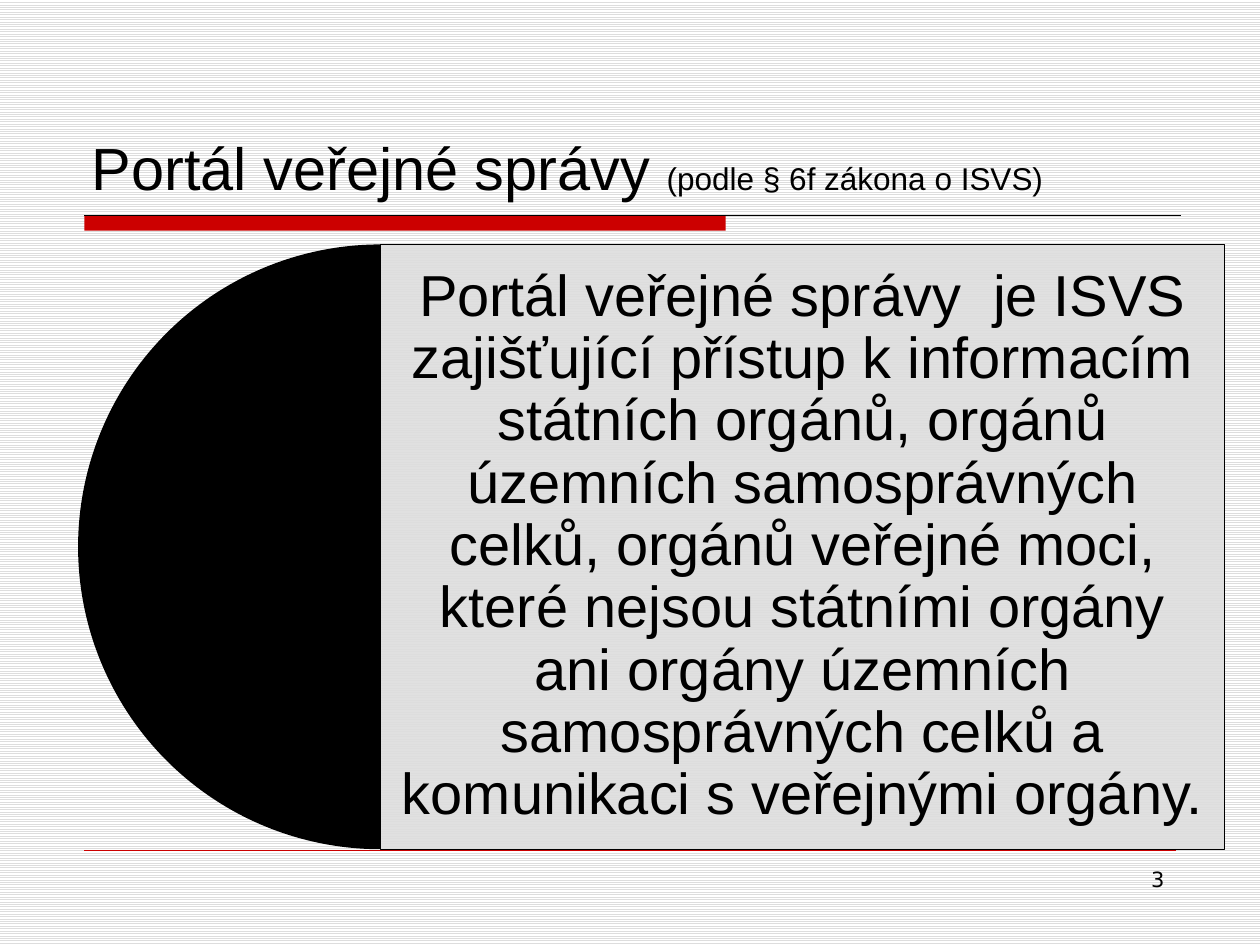
from lxml import etree
from pptx import Presentation
from pptx.dml.color import RGBColor as RGB
from pptx.enum.dml import MSO_PATTERN as PAT
from pptx.enum.shapes import MSO_CONNECTOR as CON, MSO_SHAPE as SHP
from pptx.enum.text import MSO_ANCHOR as ANC, MSO_AUTO_SIZE as AUTO, PP_ALIGN as AL
from pptx.oxml.ns import qn
from pptx.util import Inches, Pt

# Content
TITLE = [("Portál veřejné správy ", 34), ("(podle § 6f zákona o ISVS)", 18)]
BODY = [(
    "Portál veřejné správy  je ISVS zajišťující přístup k informacím "
    "státních orgánů, orgánů územních samosprávných celků, orgánů veřejné "
    "moci, které nejsou státními orgány ani orgány územních samosprávných "
    "celků a komunikaci s veřejnými orgány.", 33)]
PAGE = [("3", 12)]
HEX = {"red": "CC0000", "black": "000000", "grey": "DDDDDD", "white": "FFFFFF"}

# Layout: the panel starts at the middle of the disc
LEFT, TOP, SIZE = 0.62, 1.94, 4.8
MID = LEFT + SIZE / 2
RULE = 1.71


def color(name):
    return RGB.from_string(HEX[name])


def write(shape, runs, font="Arial", align=AL.LEFT, anchor=ANC.TOP,
          inset=None, spacing=None):
    frame = shape.text_frame
    frame.word_wrap = True
    frame.auto_size = AUTO.NONE
    frame.vertical_anchor = anchor
    if inset is not None:
        frame.margin_left = frame.margin_right = Inches(inset)
        frame.margin_top = frame.margin_bottom = Inches(inset)
    para = frame.paragraphs[0]
    para.alignment = align
    if spacing:
        para.line_spacing = spacing
    for text, size in runs:
        run = para.add_run()
        run.text = text
        run.font.name = font
        run.font.size = Pt(size)
        run.font.color.rgb = color("black")


def block(kind, x, y, w, h, fill, line=None):
    shape = slide.shapes.add_shape(kind, *map(Inches, (x, y, w, h)))
    shape.shadow.inherit = False
    shape.fill.solid()
    shape.fill.fore_color.rgb = color(fill)
    if line:
        shape.line.color.rgb = color(line)
        shape.line.width = Pt(0.75)
    else:
        shape.line.fill.background()
    return shape


def rule(x, y, end, name, width):
    line = slide.shapes.add_connector(
        CON.STRAIGHT, *map(Inches, (x, y, end, y)))
    line.line.color.rgb = color(name)
    line.line.width = Pt(width)
    etree.SubElement(line._element.spPr, qn("a:effectLst"))


deck = Presentation()
deck.slide_width, deck.slide_height = Inches(10), Inches(7.5)
slide = deck.slides.add_slide(deck.slide_layouts[5])

# Striped background
back = slide.background.fill
back.patterned()
back.pattern = PAT.LIGHT_HORIZONTAL
back.fore_color.rgb = color("grey")
back.back_color.rgb = color("white")

# Title
title = slide.shapes.title
title.left, title.top = Inches(0.63), Inches(0.33)
title.width, title.height = Inches(8.75), Inches(1.33)
write(title, TITLE, anchor=ANC.BOTTOM)

# Title bar and rules
block(SHP.RECTANGLE, 0.67, RULE, 5.09, 0.12, "red")
rule(0.67, RULE, 9.37, "black", 0.75)
rule(0.67, 6.75, 9.33, "red", 0.25)

# Page number
page = slide.shapes.add_textbox(*map(Inches, (7.17, 6.83, 2.17, 0.52)))
write(page, PAGE, font="DejaVu Sans", align=AL.RIGHT)

# Left half of the disc: from 90 to 270 degrees
disc = block(SHP.PIE, LEFT, TOP, SIZE, SIZE, "black")
disc.adjustments[0], disc.adjustments[1] = 54, 162

# Text panel, slightly see-through
panel = block(SHP.RECTANGLE, MID, TOP, 6.7, SIZE, "grey", "black")
tint = panel._element.spPr.find(qn("a:solidFill"))[0]
etree.SubElement(tint, qn("a:alpha"), val="90000")
write(panel, BODY, align=AL.CENTER, anchor=ANC.MIDDLE, inset=0.14, spacing=0.9)

deck.save("out.pptx")
